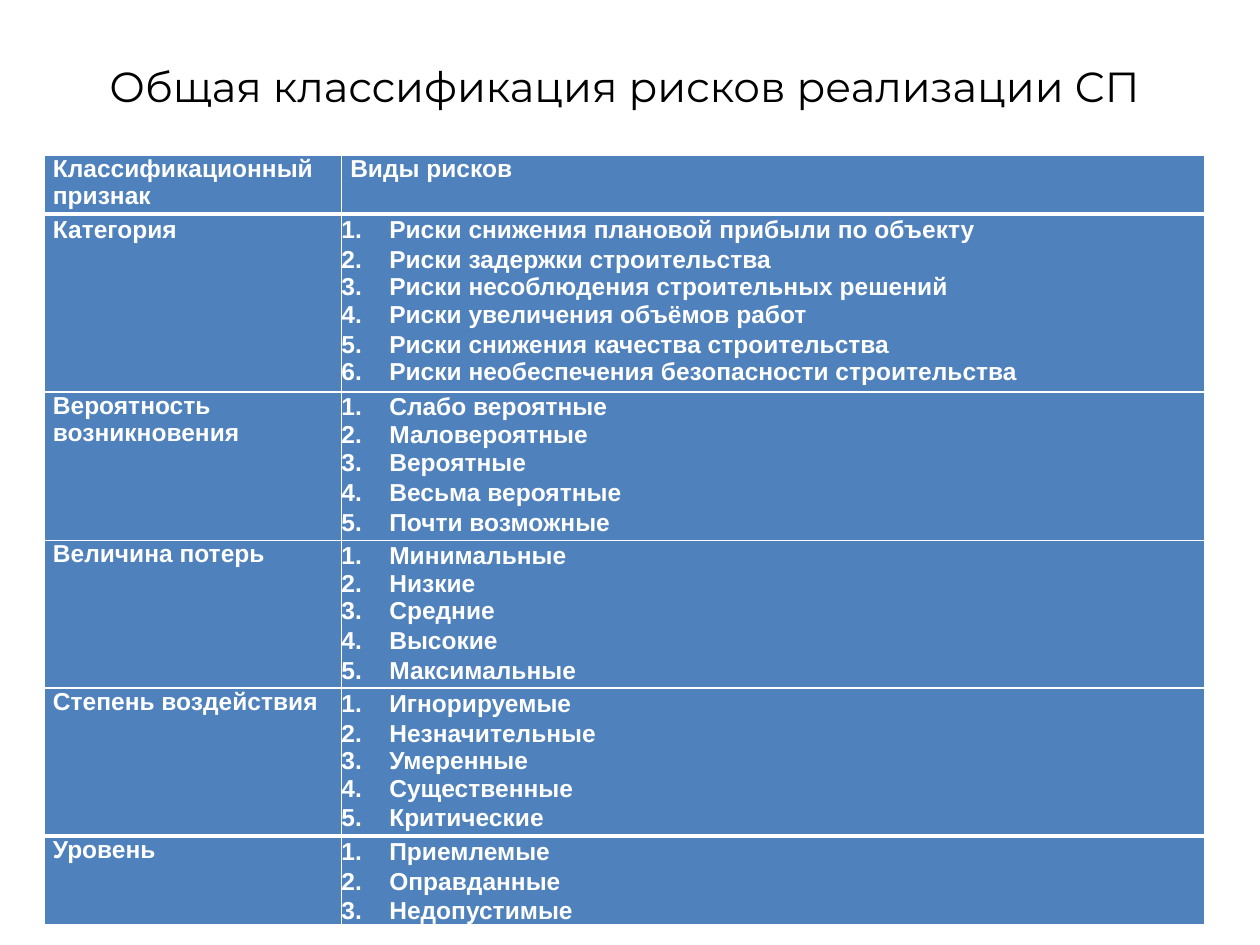
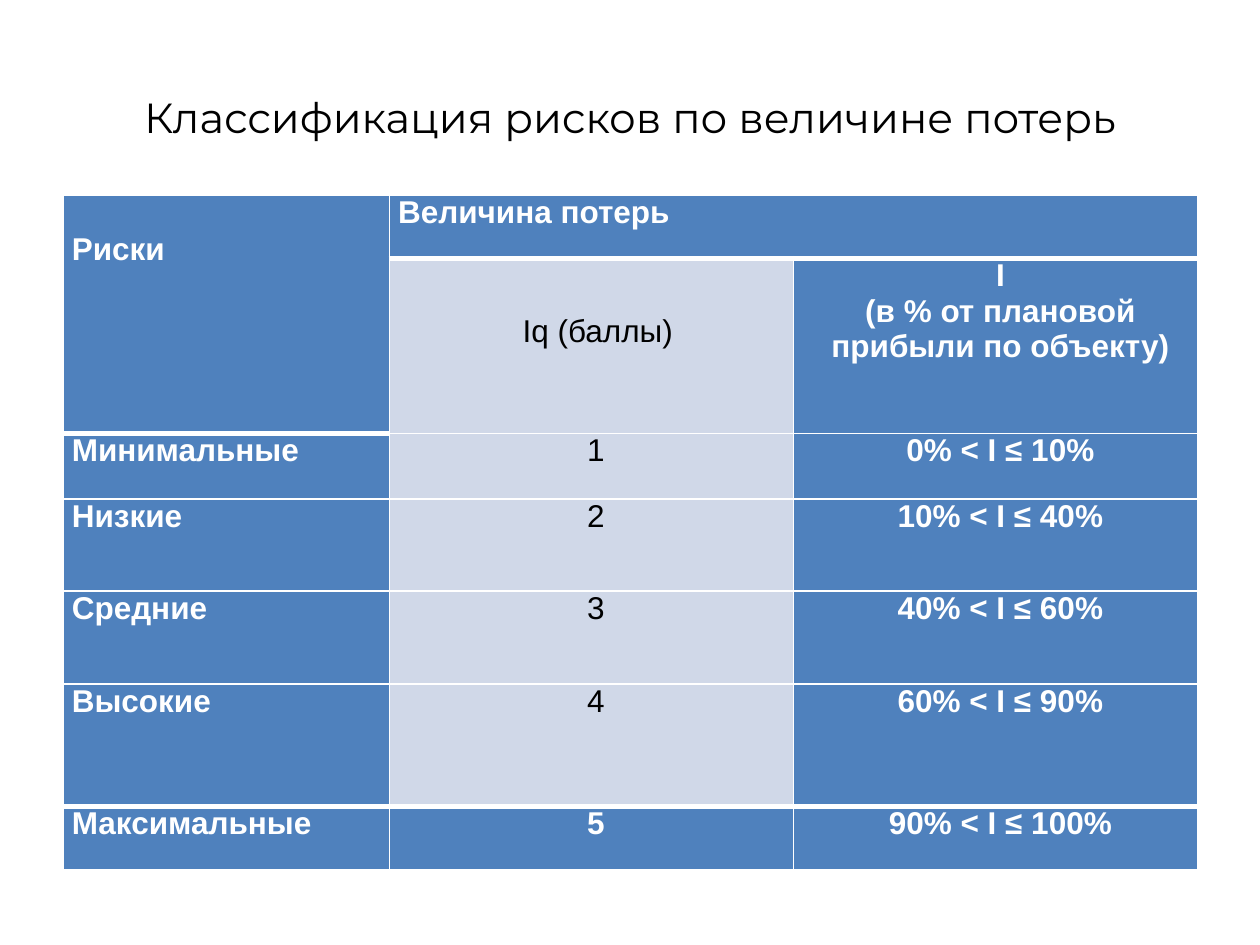
from lxml.etree import SubElement
from pptx import Presentation
from pptx.dml.color import RGBColor
from pptx.enum.text import MSO_ANCHOR, PP_ALIGN
from pptx.oxml import parse_xml
from pptx.oxml.ns import nsdecls, qn
from pptx.util import Inches, Pt

BLUE = RGBColor(0x4F, 0x81, 0xBD)
PALE = RGBColor(0xD0, 0xD8, 0xE8)
WHITE = RGBColor(0xFF, 0xFF, 0xFF)
BLACK = RGBColor(0x00, 0x00, 0x00)
TITLE_FONT, BODY_FONT = "Montserrat", "Arial"
THIN, THICK = 1, 3
INDENT, LIST_INDENT = 0.07, 0.38

RISK_KINDS = [
    ("Категория", [
        ("Риски снижения плановой прибыли по объекту", 16.8),
        ("Риски задержки строительства", 17.2),
        ("Риски несоблюдения строительных решений", None),
        ("Риски увеличения объёмов работ", None),
        ("Риски снижения качества строительства", 17.2),
        ("Риски необеспечения безопасности строительства", None)]),
    ("Вероятность возникновения", [
        ("Слабо вероятные", 16.8), ("Маловероятные", None), ("Вероятные", None),
        ("Весьма вероятные", 17.2), ("Почти возможные", 17.2)]),
    ("Величина потерь", [
        ("Минимальные", 16.8), ("Низкие", None), ("Средние", None),
        ("Высокие", 17.2), ("Максимальные", 16.8)]),
    ("Степень воздействия", [
        ("Игнорируемые", 16.8), ("Незначительные", 17.2), ("Умеренные", None),
        ("Существенные", None), ("Критические", 16.8)]),
    ("Уровень", [
        ("Приемлемые", 16.8), ("Оправданные", 17.2), ("Недопустимые", 16.8)]),
]
LOSS_LEVELS = ["Минимальные", "Низкие", "Средние", "Высокие", "Максимальные"]
LOSS_BOUNDS = [0, 10, 40, 60, 90, 100]


def style_runs(p, font, size, color, bold=False):
    for r in p.runs:
        r.font.name = font
        r.font.size = Pt(size)
        r.font.bold = bold
        r.font.color.rgb = color


def add_title(slide, text, left, top, width, height):
    tf = slide.shapes.add_textbox(
        Inches(left), Inches(top), Inches(width), Inches(height)).text_frame
    tf.word_wrap = True
    tf.vertical_anchor = MSO_ANCHOR.MIDDLE
    tf.text = text
    p = tf.paragraphs[0]
    p.alignment = PP_ALIGN.CENTER
    style_runs(p, TITLE_FONT, 24, BLACK)


def add_grid(slide, left, top, height, col_widths, row_heights):
    frame = slide.shapes.add_table(
        len(row_heights), len(col_widths), Inches(left), Inches(top),
        Inches(sum(col_widths)), Inches(height))
    table = frame.table
    for column, width in zip(table.columns, col_widths):
        column.width = Inches(width)
    for row, row_height in zip(table.rows, row_heights):
        row.height = Inches(row_height)
    frame.height = Inches(height)
    return table


def set_borders(cell, top=THIN, bottom=THIN):
    tc_pr = cell._tc.get_or_add_tcPr()
    edges = {"lnL": THIN, "lnR": THIN, "lnT": top, "lnB": bottom}
    for i, (tag, width) in enumerate(edges.items()):
        tc_pr.insert(i, parse_xml(
            f'<a:{tag} {nsdecls("a")} w="{Pt(width)}"><a:solidFill>'
            f'<a:srgbClr val="{WHITE}"/></a:solidFill></a:{tag}>'))


def rule_table(table, thick_edges):
    for i, row in enumerate(table.rows):
        for j, cell in enumerate(row.cells):
            set_borders(cell,
                        THICK if (i, j) in thick_edges else THIN,
                        THICK if (i + 1, j) in thick_edges else THIN)


def fill_cell(cell, lines, size, fill=BLUE, color=WHITE, bold=True,
              align=PP_ALIGN.LEFT, indent=INDENT, numbered=False, top=0):
    cell.margin_left = cell.margin_right = cell.margin_bottom = 0
    cell.margin_top = Inches(top)
    cell.fill.solid()
    cell.fill.fore_color.rgb = fill
    tf = cell.text_frame
    tf.text = "\n".join(text for text, _ in lines)
    for p, (_, spacing) in zip(tf.paragraphs, lines):
        p.alignment = align
        if spacing:
            p.line_spacing = Pt(spacing)
        p_pr = p._p.get_or_add_pPr()
        p_pr.set("marL", str(Inches(indent)))
        p_pr.set("indent", str(-Inches(indent) if numbered else 0))
        if numbered:
            SubElement(p_pr, qn("a:buFont")).set("typeface", "+mj-lt")
            SubElement(p_pr, qn("a:buAutoNum")).set("type", "arabicPeriod")
        style_runs(p, BODY_FONT, size, color, bold)


def build_risk_kinds(slide):
    add_title(slide, "Общая классификация рисков реализации СП ", 0.12, 0.13, 9.76, 1.1)
    table = add_grid(slide, 0.35, 1.23, 6.11, [2.36, 6.85],
                     [0.3, 1.06, 0.95, 0.95, 0.85, 0.67])
    for j, heading in enumerate(["Классификационный признак", "Виды рисков"]):
        fill_cell(table.cell(0, j), [(heading, None)], 14)
    for i, (feature, kinds) in enumerate(RISK_KINDS, 1):
        fill_cell(table.cell(i, 0), [(feature, 16.8 if i == 1 else None)], 14)
        fill_cell(table.cell(i, 1), kinds, 14, indent=LIST_INDENT, numbered=True)
    last = len(RISK_KINDS)
    rule_table(table, {(i, j) for i in (1, last) for j in range(2)})


def build_loss_levels(slide):
    add_title(slide, "Классификация рисков по величине потерь", 0.5, 0.3, 9, 1.25)
    table = add_grid(slide, 0.5, 1.55, 5.35, [2.59, 3.21, 3.21],
                     [0.5, 1.39, 0.52, 0.73, 0.74, 0.97, 0.5])
    table.cell(0, 0).merge(table.cell(1, 0))
    table.cell(0, 1).merge(table.cell(0, 2))
    center = PP_ALIGN.CENTER
    points = dict(fill=PALE, color=BLACK, bold=False)
    fill_cell(table.cell(0, 0), [("Риски", None)], 18, top=0.29)
    fill_cell(table.cell(0, 1), [("Величина потерь", None)], 18)
    fill_cell(table.cell(1, 1), [("Iq (баллы)", 17.3)], 18, align=center,
              indent=0.1, top=0.48, **points)
    fill_cell(table.cell(1, 2),
              [("I", None), ("(в % от плановой прибыли по объекту)", None)],
              18, align=center)
    last = len(LOSS_LEVELS)
    bounds = zip(LOSS_BOUNDS, LOSS_BOUNDS[1:])
    for n, (level, (low, high)) in enumerate(zip(LOSS_LEVELS, bounds), 1):
        label, score, share = table.rows[n + 1].cells
        fill_cell(label, [(level, None)], 18)
        fill_cell(score, [(str(n), None)], 18, align=center,
                  **({} if n == last else points))
        fill_cell(share, [(f"{low}% < I ≤ {high}%", None)], 18, align=center)
    rule_table(table, {(1, 1), (1, 2), (2, 0)} | {(last + 1, j) for j in range(3)})
    set_merged_bottom(table.cell(0, 0))


def set_merged_bottom(cell):
    cell._tc.tcPr.find(qn("a:lnB")).set("w", str(Pt(THICK)))


def main():
    prs = Presentation()
    prs.slide_width, prs.slide_height = Inches(10), Inches(7.5)
    blank = prs.slide_layouts[6]
    for build in (build_risk_kinds, build_loss_levels):
        build(prs.slides.add_slide(blank))
    prs.save("out.pptx")


if __name__ == "__main__":
    main()
